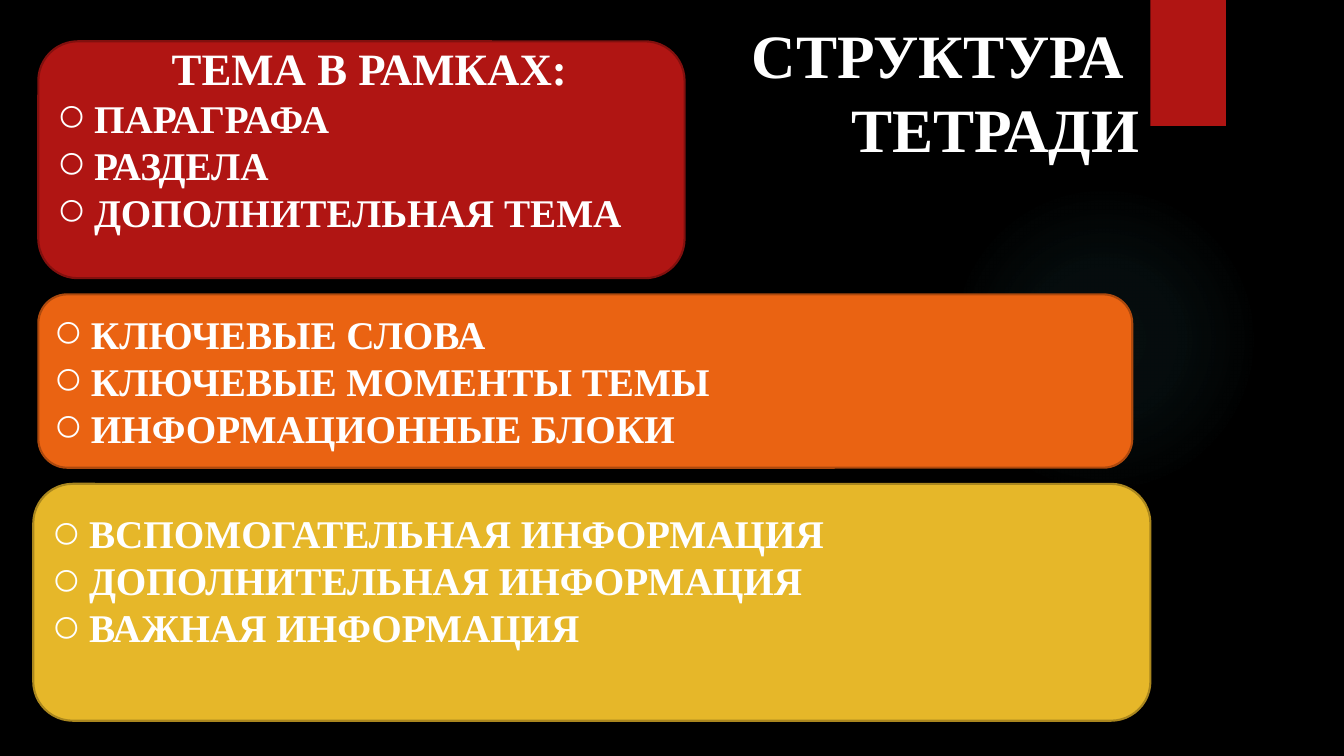
from lxml.etree import SubElement
from pptx import Presentation
from pptx.dml.color import RGBColor
from pptx.enum.shapes import MSO_SHAPE
from pptx.enum.text import MSO_ANCHOR, PP_ALIGN
from pptx.oxml import parse_xml
from pptx.oxml.ns import nsdecls, qn
from pptx.util import Inches, Pt

BLACK = RGBColor(0x00, 0x00, 0x00)
WHITE = RGBColor(0xFF, 0xFF, 0xFF)
RED = RGBColor(0xB0, 0x15, 0x13)
DARK_RED = RGBColor(0x82, 0x10, 0x0E)
ORANGE = RGBColor(0xEA, 0x63, 0x12)
DARK_ORANGE = RGBColor(0xAD, 0x49, 0x0D)
YELLOW = RGBColor(0xE6, 0xB7, 0x29)
DARK_YELLOW = RGBColor(0xAA, 0x87, 0x1E)
GLOW = RGBColor(0x50, 0xB9, 0xC1)

SERIF = "Times New Roman"
SANS = "TeX Gyre Adventor"
BULLET_INDENT = Inches(0.34)
HEADING_INDENT = Inches(1.11)


def style(paragraph, size):
    for run in paragraph.runs:
        run.font.name = SERIF
        run.font.size = Pt(size)
        run.font.bold = True
        run.font.color.rgb = WHITE


def add_bullet(paragraph, bullet_font):
    properties = paragraph._p.get_or_add_pPr()
    properties.set("marL", str(BULLET_INDENT))
    properties.set("indent", str(-BULLET_INDENT))
    SubElement(properties, qn("a:buFont"), typeface=bullet_font)
    SubElement(properties, qn("a:buChar"), char="⚪")


def add_plain_shape(slide, kind, box):
    shape = slide.shapes.add_shape(kind, *map(Inches, box))
    shape.shadow.inherit = False
    shape.line.fill.background()
    return shape


def add_backdrop(slide, glow_box, tab_box):
    slide.background.fill.solid()
    slide.background.fill.fore_color.rgb = BLACK

    # Soft round glow: (position %, opacity %)
    glow = add_plain_shape(slide, MSO_SHAPE.OVAL, glow_box)
    stops = "".join(
        f'<a:gs pos="{position * 1000}"><a:srgbClr val="{GLOW}">'
        f'<a:alpha val="{opacity * 1000}"/></a:srgbClr></a:gs>'
        for position, opacity in ((0, 7), (36, 6), (69, 0), (100, 0))
    )
    gradient = parse_xml(
        f'<a:gradFill {nsdecls("a")} rotWithShape="1"><a:gsLst>{stops}</a:gsLst>'
        '<a:path path="circle"><a:fillToRect l="50000" t="50000" r="50000" b="50000"/>'
        "</a:path></a:gradFill>"
    )
    glow._element.spPr.find(qn("a:prstGeom")).addnext(gradient)

    # Red tab at the top edge
    tab = add_plain_shape(slide, MSO_SHAPE.RECTANGLE, tab_box)
    tab.fill.solid()
    tab.fill.fore_color.rgb = RED


def add_title(slide, box, text):
    title = slide.shapes.add_textbox(*map(Inches, box))
    title.text_frame.word_wrap = False
    title.text_frame.text = text
    paragraph = title.text_frame.paragraphs[0]
    paragraph.alignment = PP_ALIGN.RIGHT
    style(paragraph, 44)


def add_panel(slide, box, fill, border, items, heading=None,
              bullet_font=SANS, bottom_inset=0.05):
    panel = add_plain_shape(slide, MSO_SHAPE.ROUNDED_RECTANGLE, box)
    panel.fill.solid()
    panel.fill.fore_color.rgb = fill
    panel.line.color.rgb = border
    panel.line.width = Pt(1.5)

    frame = panel.text_frame
    frame.word_wrap = True
    frame.vertical_anchor = MSO_ANCHOR.MIDDLE
    frame.margin_bottom = Inches(bottom_inset)
    lines = ([heading] if heading else []) + items
    frame.text = "\n".join(lines)
    for paragraph in frame.paragraphs:
        paragraph.alignment = PP_ALIGN.LEFT
        if paragraph.text == heading:
            paragraph._p.get_or_add_pPr().set("marL", str(HEADING_INDENT))
            style(paragraph, 32)
        else:
            paragraph.line_spacing = Pt(33.6)
            add_bullet(paragraph, bullet_font)
            style(paragraph, 28)


def main():
    presentation = Presentation()
    presentation.slide_width = Inches(13.33)
    presentation.slide_height = Inches(7.5)
    slide = presentation.slides.add_slide(presentation.slide_layouts[6])

    add_backdrop(slide, (9.41, 1.83, 3.08, 3.08), (11.41, 0, 0.75, 1.25))
    add_title(slide, (7.32, 0.12, 4.08, 1.58), "СТРУКТУРА \vТЕТРАДИ")

    # Topic, key points and supporting information
    add_panel(slide, (0.38, 0.41, 6.41, 2.35), RED, DARK_RED,
              ["ПАРАГРАФА", "РАЗДЕЛА", "ДОПОЛНИТЕЛЬНАЯ ТЕМА"],
              heading="ТЕМА В РАМКАХ:", bottom_inset=0.48)
    add_panel(slide, (0.38, 2.92, 10.85, 1.72), ORANGE, DARK_ORANGE,
              ["КЛЮЧЕВЫЕ СЛОВА", "КЛЮЧЕВЫЕ МОМЕНТЫ ТЕМЫ", "ИНФОРМАЦИОННЫЕ БЛОКИ"])
    add_panel(slide, (0.33, 4.8, 11.08, 2.35), YELLOW, DARK_YELLOW,
              ["ВСПОМОГАТЕЛЬНАЯ ИНФОРМАЦИЯ", "ДОПОЛНИТЕЛЬНАЯ ИНФОРМАЦИЯ",
               "ВАЖНАЯ ИНФОРМАЦИЯ"],
              bullet_font=SERIF, bottom_inset=0.5)

    presentation.save("out.pptx")


if __name__ == "__main__":
    main()
